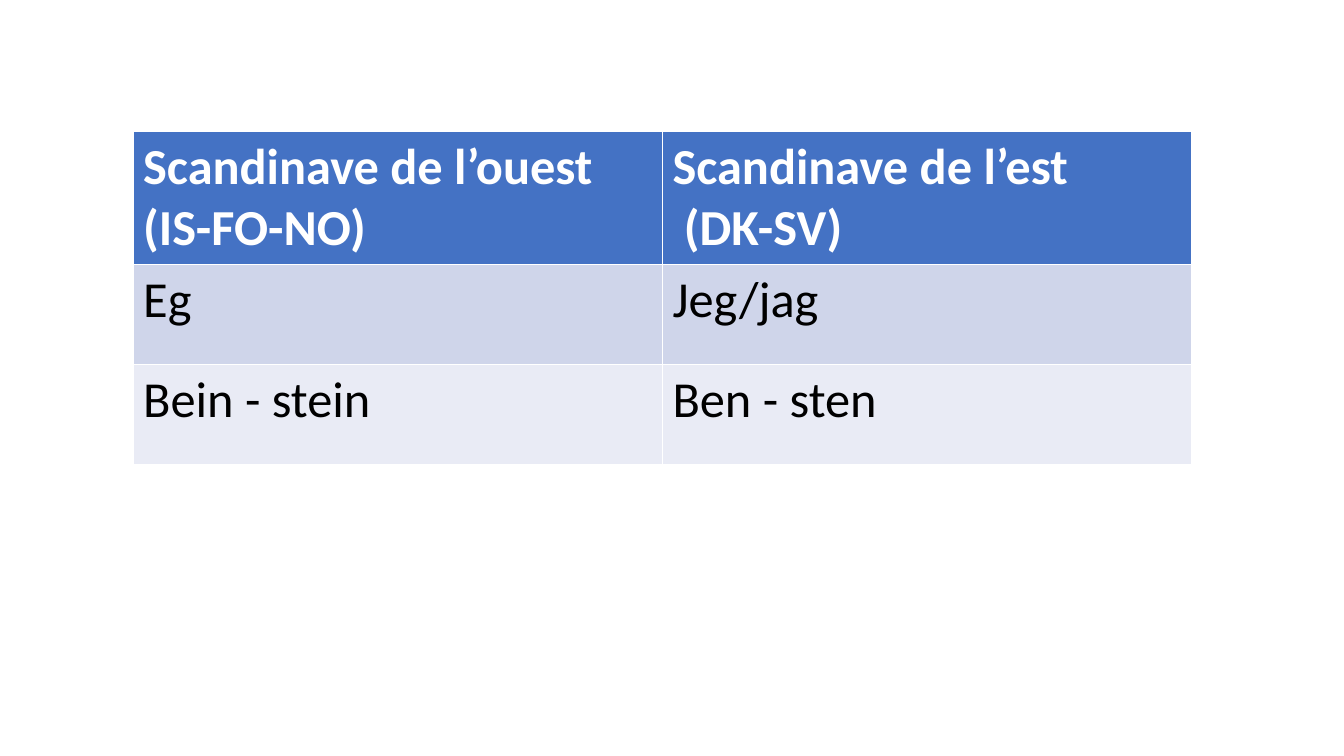
from pptx import Presentation
from pptx.dml.color import RGBColor
from pptx.util import Inches, Pt

# Content: header row, then examples
ROWS = [
    ("Scandinave de l’ouest (IS-FO-NO)", "Scandinave de l’est\n (DK-SV)"),
    ("Eg", "Jeg/jag"),
    ("Bein - stein", "Ben - sten"),
]
ROW_HEIGHTS = [1.31, 0.99, 1.0]
COLUMN_WIDTH = 5.25

WHITE = RGBColor(0xFF, 0xFF, 0xFF)
BLACK = RGBColor(0x00, 0x00, 0x00)
ROW_FILLS = [
    RGBColor(0x44, 0x72, 0xC4),
    RGBColor(0xCF, 0xD5, 0xEA),
    RGBColor(0xE9, 0xEB, 0xF5),
]

# Slide
presentation = Presentation()
presentation.slide_width = Inches(13.33)
presentation.slide_height = Inches(7.5)
slide = presentation.slides.add_slide(presentation.slide_layouts[6])

# Comparison table; its default style draws the white borders
column_count = len(ROWS[0])
table = slide.shapes.add_table(
    len(ROWS), column_count, Inches(1.32), Inches(1.3),
    Inches(COLUMN_WIDTH * column_count), Inches(sum(ROW_HEIGHTS)),
).table
for column in table.columns:
    column.width = Inches(COLUMN_WIDTH)

for row_index, (row, height) in enumerate(zip(table.rows, ROW_HEIGHTS)):
    row.height = Inches(height)
    is_header = row_index == 0
    for cell, words in zip(row.cells, ROWS[row_index]):
        cell.fill.solid()
        cell.fill.fore_color.rgb = ROW_FILLS[row_index]
        cell.text = words
        for paragraph in cell.text_frame.paragraphs:
            font = paragraph.font
            font.name = "Calibri"
            font.size = Pt(36)
            font.bold = is_header
            font.color.rgb = WHITE if is_header else BLACK

presentation.save("out.pptx")
